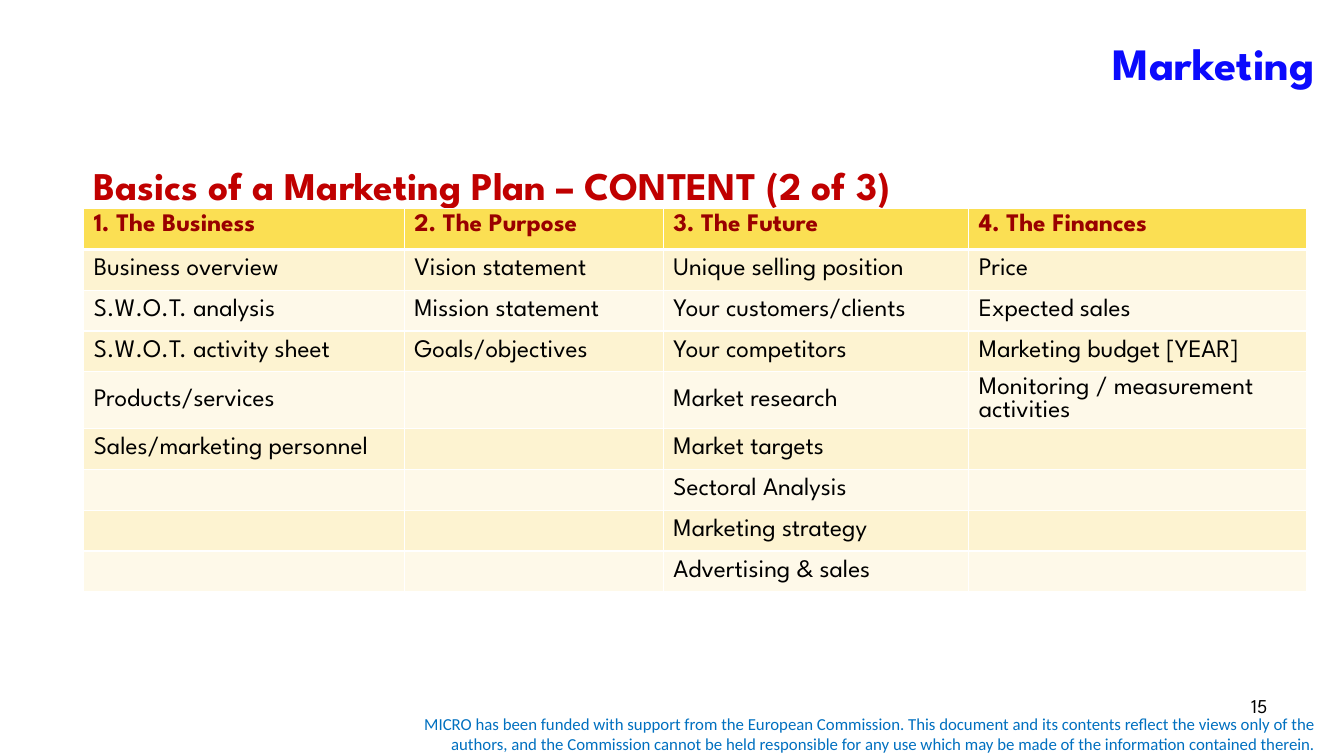
from itertools import zip_longest

from lxml import etree
from pptx import Presentation
from pptx.dml.color import RGBColor
from pptx.enum.text import MSO_ANCHOR, PP_ALIGN
from pptx.oxml.ns import qn
from pptx.util import Inches, Pt

LEFT, RIGHT = PP_ALIGN.LEFT, PP_ALIGN.RIGHT
TOP, MIDDLE = MSO_ANCHOR.TOP, MSO_ANCHOR.MIDDLE
SPARTAN = "League Spartan"


def write(tf, text, size=18, color="000000", bold=False, font=SPARTAN, align=LEFT, anchor=TOP):
    """Fill a text frame with one formatted paragraph."""
    tf.word_wrap = True
    tf.vertical_anchor = anchor
    p = tf.paragraphs[0]
    p.alignment = align
    p.space_before = Pt(0)
    r = p.add_run()
    r.text = text
    r.font.size, r.font.bold, r.font.name = Pt(size), bold, font
    r.font.color.rgb = RGBColor.from_string(color)
    return p


def add_border(cell, side, width):
    """Draw one white cell edge; called before the cell is filled."""
    ln = etree.SubElement(cell._tc.get_or_add_tcPr(), qn(f"a:{side}"), w=str(Pt(width)))
    fill = etree.SubElement(ln, qn("a:solidFill"))
    etree.SubElement(fill, qn("a:srgbClr"), val="FFFFFF")


prs = Presentation()
prs.slide_width, prs.slide_height = Inches(13.33), Inches(7.5)
s = prs.slides.add_slide(prs.slide_layouts[1])

# Title and subtitle placeholders
title, body = s.placeholders[0], s.placeholders[1]
for sp, box in ((title, (1.14, 0, 12, 1.25)), (body, (0.83, 1.55, 12, 5.5))):
    sp.left, sp.top, sp.width, sp.height = map(Inches, box)
write(title.text_frame, "Marketing", size=32, color="0B0AFD", bold=True, align=RIGHT, anchor=MIDDLE)
p = write(body.text_frame, "Basics of a Marketing Plan – CONTENT (2 of 3)",
          size=28, color="C00000", bold=True)
pPr = p._p.get_or_add_pPr()
pPr.set("marL", "0")
pPr.set("indent", "0")
etree.SubElement(pPr, qn("a:buNone"))

# Marketing plan contents, one list per column
columns = {
    "1. The Business": ["Business overview", "S.W.O.T. analysis", "S.W.O.T. activity sheet",
                        "Products/services", "Sales/marketing personnel"],
    "2. The Purpose": ["Vision statement", "Mission statement", "Goals/objectives"],
    "3. The Future": ["Unique selling position", "Your customers/clients", "Your competitors",
                      "Market research", "Market targets", "Sectoral Analysis",
                      "Marketing strategy", "Advertising & sales"],
    "4. The Finances": ["Price", "Expected sales", "Marketing budget [YEAR]",
                        "Monitoring / measurement activities"],
}
rows = [list(columns), *zip_longest(*columns.values(), fillvalue="")]
widths = [3.18, 2.57, 3.03, 3.35]
row_height = 0.405
table = s.shapes.add_table(len(rows), len(widths), Inches(0.83), Inches(2.07),
                           Inches(sum(widths)), Inches(row_height * len(rows))).table
for col, width in zip(table.columns, widths):
    col.width = Inches(width)

for i, texts in enumerate(rows):
    table.rows[i].height = Inches(row_height)
    header = i == 0
    fill = "FBDF53" if header else ("FEF9E9", "FDF3D1")[i % 2]
    for j, text in enumerate(texts):
        cell = table.cell(i, j)
        for side in ("lnL", "lnR", "lnT", "lnB"):
            thick = (header and side == "lnB") or (i == 1 and side == "lnT")
            add_border(cell, side, 3 if thick else 1)
        cell.fill.solid()
        cell.fill.fore_color.rgb = RGBColor.from_string(fill)
        cell.vertical_anchor = TOP if header else MIDDLE
        if text:
            write(cell.text_frame, text, color="990000" if header else "000000",
                  bold=header, anchor=TOP if header else MIDDLE)

# Funding note and slide number
funding = ("MICRO has been funded with support from the European Commission. This document and "
           "its contents reflect the views only of the authors, and the Commission cannot be held "
           "responsible for any use which may be made of the information contained therein.")
notes = [
    ((3.75, 7.03, 9.4, 0.5), funding,
     dict(size=12, color="0070C0", font="Calibri", align=RIGHT, anchor=MIDDLE)),
    ((9.56, 6.83, 3.11, 0.52), "15", dict(size=14, align=RIGHT)),
]
for box, text, style in notes:
    write(s.shapes.add_textbox(*map(Inches, box)).text_frame, text, **style)

prs.save("out.pptx")
